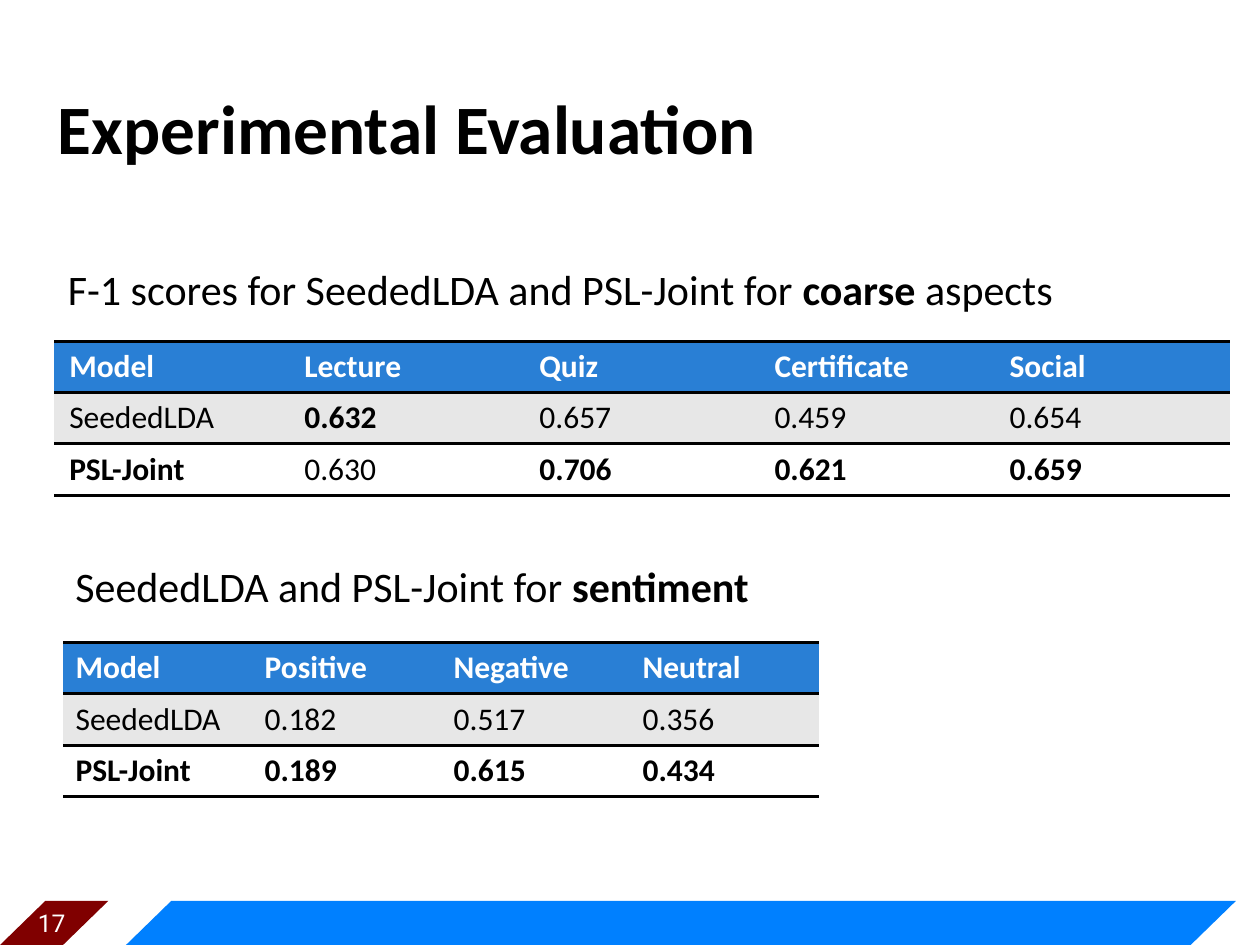
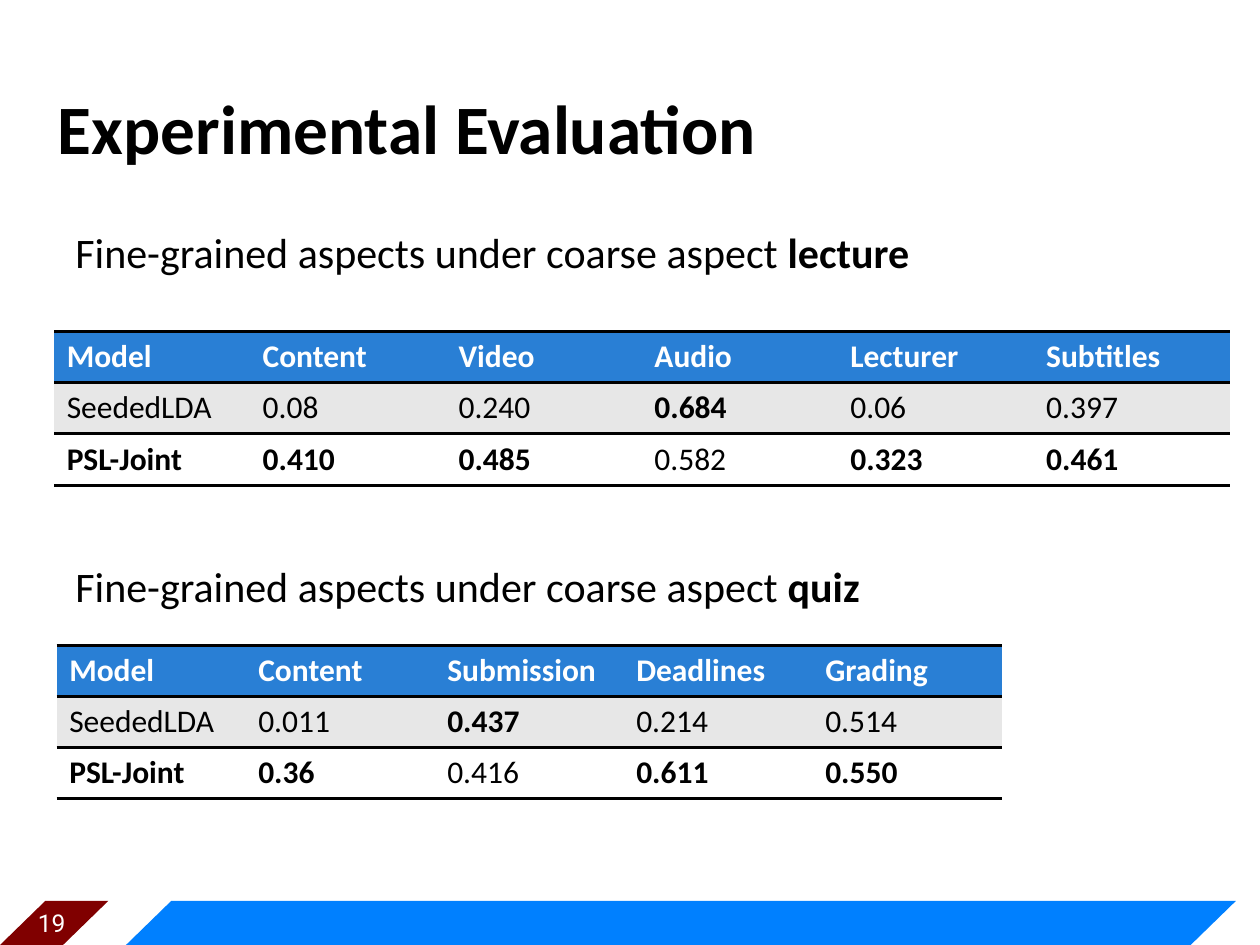
from dataclasses import dataclass
from typing import Any

from lxml import etree
from pptx import Presentation
from pptx.dml.color import RGBColor
from pptx.enum.shapes import MSO_SHAPE
from pptx.enum.text import MSO_ANCHOR, MSO_AUTO_SIZE, PP_ALIGN
from pptx.oxml.ns import qn
from pptx.util import Inches, Length, Pt

PARALLELOGRAM = MSO_SHAPE.PARALLELOGRAM
MIDDLE = MSO_ANCHOR.MIDDLE
NO_AUTOFIT = MSO_AUTO_SIZE.NONE
LEFT, CENTER = PP_ALIGN.LEFT, PP_ALIGN.CENTER

# Shared look
BLACK = RGBColor(0x00, 0x00, 0x00)
WHITE = RGBColor(0xFF, 0xFF, 0xFF)
BAND_BLUE = RGBColor(0x00, 0x80, 0xFF)
NUMBER_RED = RGBColor(0x80, 0x00, 0x00)
HEADER_BLUE = RGBColor(0x29, 0x7F, 0xD5)
ROW_GREY = RGBColor(0xE7, 0xE7, 0xE7)
TEXT_FONT, NUMBER_FONT = "Calibri", "Roboto"
TITLE_SIZE, CAPTION_SIZE, TABLE_SIZE, NUMBER_SIZE = 39.6, 24, 18, 14
RULE_WIDTH = Pt(2)
PLAIN_TABLE_STYLE = "{2D5ABB26-0587-4C30-8999-92F81FD0307C}"
MODELS = ("SeededLDA", "PSL-Joint")

# The slide is a grid of 100 columns by 75 rows
SLIDE_WIDTH, SLIDE_HEIGHT = Inches(10), Inches(7.5)
COLUMN, ROW = SLIDE_WIDTH / 100, SLIDE_HEIGHT / 75
TABLE_ROW = 4.07


@dataclass(frozen=True)
class Area:
    """A place on the grid, in columns and rows."""
    left: float
    top: float
    width: float
    height: float

    def lengths(self) -> tuple[Length, ...]:
        return (Length(round(self.left * COLUMN)), Length(round(self.top * ROW)),
                Length(round(self.width * COLUMN)), Length(round(self.height * ROW)))


@dataclass(frozen=True)
class Phrase:
    text: str
    bold: bool = False


@dataclass(frozen=True)
class Band:
    area: Area
    color: RGBColor


@dataclass(frozen=True)
class Scores:
    """A captioned table; each aspect has one score per model."""
    caption: tuple[Phrase, ...]
    caption_area: Area
    left: float
    top: float
    width: float
    aspects: dict[str, tuple[str, str]]
    side_margin: float = 0.1


@dataclass(frozen=True)
class Page:
    number: int
    scores: tuple[Scores, ...]


TITLE_AREA = Area(3.6, 6.2, 93.7, 7.7)
NUMBER_AREA = Area(1.2, 7.15 * 10, 5.8, 3.4)
LOWER_CAPTION_AREA = Area(5, 44, 90, 7)
BANDS = (
    Band(Area(9.8, 71.5, 88.3, 3.7), BAND_BLUE),
    Band(Area(-0.2, 71.5, 8.8, 3.7), NUMBER_RED),
)
FINE_GRAINED = Phrase("Fine-grained aspects under coarse aspect ")

PAGES = (
    Page(17, (
        Scores(
            (Phrase("F-1 scores for SeededLDA and PSL-Joint for "),
             Phrase("coarse", True), Phrase(" aspects")),
            Area(4.4, 20.4, 90, 5.2), 4.3, 27.1, 93.3,
            {"Lecture": ("0.632", "0.630"), "Quiz": ("0.657", "0.706"),
             "Certificate": ("0.459", "0.621"), "Social": ("0.654", "0.659")},
            side_margin=0.12,
        ),
        Scores(
            (Phrase("SeededLDA and PSL-Joint for "), Phrase("sentiment", True)),
            LOWER_CAPTION_AREA, 5, 51, 60,
            {"Positive": ("0.182", "0.189"), "Negative": ("0.517", "0.615"),
             "Neutral": ("0.356", "0.434")},
        ),
    )),
    Page(19, (
        Scores(
            (FINE_GRAINED, Phrase("lecture", True)),
            Area(5, 17.5, 90, 9.8), 4.3, 26.3, 93.3,
            {"Content": ("0.08", "0.410"), "Video": ("0.240", "0.485"),
             "Audio": ("0.684", "0.582"), "Lecturer": ("0.06", "0.323"),
             "Subtitles": ("0.397", "0.461")},
        ),
        Scores(
            (FINE_GRAINED, Phrase("quiz", True)),
            LOWER_CAPTION_AREA, 4.5, 51.2, 75,
            {"Content": ("0.011", "0.36"), "Submission": ("0.437", "0.416"),
             "Deadlines": ("0.214", "0.611"), "Grading": ("0.514", "0.550")},
        ),
    )),
)


def add_phrase(paragraph: Any, phrase: Phrase, size: float,
               color: RGBColor = BLACK, font: str = TEXT_FONT) -> None:
    run = paragraph.add_run()
    run.text = phrase.text
    run.font.name, run.font.size, run.font.bold = font, Pt(size), phrase.bold
    run.font.color.rgb = color


def set_title(slide: Any, text: str) -> None:
    title = slide.shapes.title
    title.left, title.top, title.width, title.height = TITLE_AREA.lengths()
    frame = title.text_frame
    frame.auto_size, frame.vertical_anchor = NO_AUTOFIT, MIDDLE
    frame.paragraphs[0].alignment = LEFT
    add_phrase(frame.paragraphs[0], Phrase(text, True), TITLE_SIZE)


def add_text(slide: Any, area: Area) -> Any:
    frame = slide.shapes.add_textbox(*area.lengths()).text_frame
    frame.word_wrap = True
    return frame


def add_footer(slide: Any, number: int) -> None:
    for band in BANDS:
        shape = slide.shapes.add_shape(PARALLELOGRAM, *band.area.lengths())
        shape.adjustments[0] = 1.027
        shape.shadow.inherit = False
        shape.fill.solid()
        shape.fill.fore_color.rgb = band.color
        shape.line.fill.background()
    frame = add_text(slide, NUMBER_AREA)
    frame.vertical_anchor = MIDDLE
    frame.paragraphs[0].alignment = CENTER
    add_phrase(frame.paragraphs[0], Phrase(str(number)), NUMBER_SIZE, WHITE, NUMBER_FONT)


def add_rule(cell: Any, side: str) -> None:
    """Draw a black border; side is lnT or lnB."""
    rule = etree.SubElement(cell._tc.get_or_add_tcPr(), qn(f"a:{side}"), w=str(RULE_WIDTH))
    fill = etree.SubElement(rule, qn("a:solidFill"))
    etree.SubElement(fill, qn("a:srgbClr"), val=str(BLACK))


def table_rows(scores: Scores) -> list[list[Phrase]]:
    """Header and one row per model, with the best score of each aspect in bold."""
    rows = [[Phrase(name, True) for name in ("Model", *scores.aspects)]]
    for index, model in enumerate(MODELS):
        rows.append([Phrase(model, model == MODELS[-1])] + [
            Phrase(values[index], float(values[index]) == max(map(float, values)))
            for values in scores.aspects.values()])
    return rows


def add_scores(slide: Any, scores: Scores) -> None:
    caption = add_text(slide, scores.caption_area).paragraphs[0]
    for phrase in scores.caption:
        add_phrase(caption, phrase, CAPTION_SIZE)

    rows = table_rows(scores)
    area = Area(scores.left, scores.top, scores.width, TABLE_ROW * len(rows))
    graphic = slide.shapes.add_table(len(rows), len(rows[0]), *area.lengths())
    table = graphic.table
    table.horz_banding = False
    next(graphic.element.iter(qn("a:tableStyleId"))).text = PLAIN_TABLE_STYLE

    fills = (HEADER_BLUE, ROW_GREY, WHITE)
    for r, (phrases, fill) in enumerate(zip(rows, fills)):
        for c, phrase in enumerate(phrases):
            cell = table.cell(r, c)
            cell.margin_left = cell.margin_right = Inches(scores.side_margin)
            # Rules above and below the header, and below the last row
            if r < 2:
                add_rule(cell, "lnT")
            if r != 1:
                add_rule(cell, "lnB")
            cell.fill.solid()
            cell.fill.fore_color.rgb = fill
            add_phrase(cell.text_frame.paragraphs[0], phrase, TABLE_SIZE,
                       WHITE if r == 0 else BLACK)


def main() -> None:
    deck = Presentation()
    deck.slide_width, deck.slide_height = SLIDE_WIDTH, SLIDE_HEIGHT
    title_only = deck.slide_layouts.get_by_name("Title Only")
    for page in PAGES:
        slide = deck.slides.add_slide(title_only)
        add_footer(slide, page.number)
        set_title(slide, "Experimental Evaluation")
        for scores in page.scores:
            add_scores(slide, scores)
    deck.save("out.pptx")


if __name__ == "__main__":
    main()
